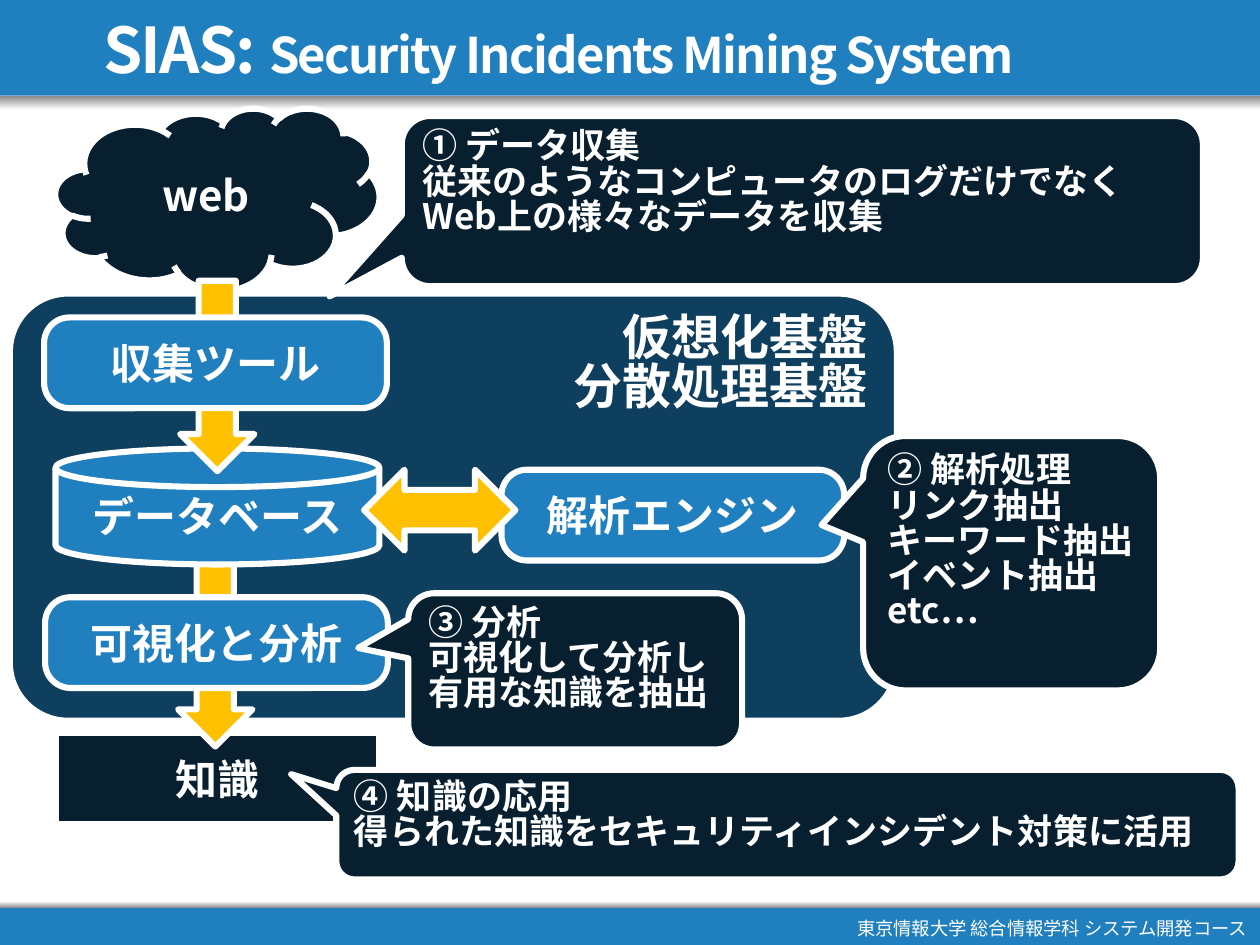
from pptx import Presentation
from pptx import util as u
from pptx.dml import color
from pptx.enum import shapes, text
from pptx.oxml import ns
from lxml import etree

COLORS = {"blue": "207FBF", "navy": "081F2F", "deep": "0F3F5F",
          "amber": "FFC000", "white": "FFFFFF", "shade": "858585"}
FONT = "Noto Sans CJK JP"
KIND = shapes.MSO_SHAPE
ALIGN = text.PP_ALIGN
ANCHOR = text.MSO_ANCHOR

presentation = Presentation()
presentation.slide_width, presentation.slide_height = u.Cm(25.4), u.Cm(19.05)
slide = presentation.slides.add_slide(presentation.slide_layouts[6])


def add_block(kind, box, fill, outlined=True):
    shape = slide.shapes.add_shape(kind, *map(u.Cm, box))
    shape.shadow.inherit = False
    shape.fill.solid()
    shape.fill.fore_color.rgb = color.RGBColor.from_string(COLORS[fill])
    if outlined:
        shape.line.color.rgb = color.RGBColor.from_string(COLORS["white"])
        shape.line.width = u.Pt(3.5)
    else:
        shape.line.fill.background()
    return shape


def write(shape, lines, size, align=ALIGN.LEFT, anchor=ANCHOR.TOP,
          bold=True, spacing=None):
    """Each line is a string, or a list of (string, size) runs."""
    frame = shape.text_frame
    frame.word_wrap, frame.vertical_anchor = True, anchor
    for index, line in enumerate(lines):
        paragraph = frame.paragraphs[0] if index == 0 else frame.add_paragraph()
        paragraph.alignment = align
        if spacing:
            paragraph.line_spacing = spacing
        for words, points in [(line, size)] if isinstance(line, str) else line:
            run = paragraph.add_run()
            run.text = words
            font_format = {"name": FONT, "size": u.Pt(points), "bold": bold}
            for name, value in font_format.items():
                setattr(run.font, name, value)
            run.font.color.rgb = color.RGBColor.from_string(COLORS["white"])
            east_asian = etree.SubElement(run.font._element, ns.qn("a:ea"))
            east_asian.set("typeface", FONT)


# Header and footer bars, each with a soft shadow
for bar, shadow, angle in [((0, 0, 25.4, 1.93), (0, 1.93, 25.4, 0.28), 270),
                           ((0, 18.31, 25.4, 0.74), (0, 18.17, 25.4, 0.14), 90)]:
    add_block(KIND.RECTANGLE, bar, "blue", outlined=False)
    shape = add_block(KIND.RECTANGLE, shadow, "shade", outlined=False)
    shape.fill.gradient()
    shape.fill.gradient_angle = angle
    for stop, name in zip(shape.fill.gradient_stops, ["shade", "white"]):
        stop.color.rgb = color.RGBColor.from_string(COLORS[name])

footer = slide.shapes.add_textbox(*map(u.Cm, (11.3, 18.34, 14.1, 0.71)))
write(footer, ["東京情報大学 総合情報学科 システム開発コース"], 10.5,
      ALIGN.RIGHT, ANCHOR.BOTTOM, bold=False)

# Title with tightened letters
title = slide.shapes.add_textbox(*map(u.Cm, (1.83, 0.03, 23.57, 1.9)))
write(title, [[("SIAS: ", 36), ("Security Incidents Mining System", 28)]], 36,
      anchor=ANCHOR.MIDDLE)
for run in title.text_frame.paragraphs[0].runs:
    run.font._element.set("spc", "-100")

# Platform behind the system, with the knowledge box below it
knowledge = add_block(KIND.RECTANGLE, (1.12, 14.78, 6.53, 1.83), "navy")
write(knowledge, ["知識"], 24, ALIGN.CENTER, ANCHOR.MIDDLE)
platform = add_block(KIND.ROUNDED_RECTANGLE, (0.2, 5.92, 17.88, 8.61), "deep")
platform.adjustments[0] = 0.136
write(platform, ["仮想化基盤", "分散処理基盤"], 28, ALIGN.RIGHT, spacing=0.83)

# Flow from back to front: nodes have a label, arrows have none
flow = [
    (KIND.RIGHT_ARROW, (2.46, 12.42, 3.76, 1.5), "amber", None),
    (KIND.FLOWCHART_MAGNETIC_DISK, (1.12, 9.04, 6.53, 2.34), "blue", "データベース"),
    (KIND.CLOUD, (1.12, 2.18, 6.53, 3.68), "navy", "web"),
    (KIND.RIGHT_ARROW, (2.46, 6.83, 3.84, 1.5), "amber", None),
    (KIND.ROUNDED_RECTANGLE, (0.89, 6.4, 6.91, 1.83), "blue", "収集ツール"),
    (KIND.ROUNDED_RECTANGLE, (10.11, 9.47, 6.91, 1.83), "blue", "解析エンジン"),
    (KIND.LEFT_RIGHT_ARROW, (7.34, 9.47, 3.05, 1.63), "amber", None),
    (KIND.ROUNDED_RECTANGLE, (0.91, 12.04, 6.91, 1.83), "blue", "可視化と分析"),
]
for kind, box, fill, label in flow:
    shape = add_block(kind, box, fill)
    if kind == KIND.RIGHT_ARROW:
        shape.rotation = 90
    if kind == KIND.ROUNDED_RECTANGLE:
        shape.adjustments[0] = 0.28
    if label:
        write(shape, [label], 24, ALIGN.CENTER, ANCHOR.MIDDLE)

# Callouts: box, pointer tip, lines
callouts = [
    ((8.1, 2.34, 16.15, 3.43), (-0.59, 0.56),
     ["① データ収集",
      "従来のようなコンピュータのログだけでなくWeb上の様々なデータを収集"]),
    ((17.4, 8.79, 5.99, 5.13), (-0.64, -0.15),
     ["② 解析処理", "リンク抽出", "キーワード抽出", "イベント抽出", "etc…"]),
    ((6.78, 15.52, 18.19, 2.21), (-0.55, -0.46),
     ["④ 知識の応用", "得られた知識をセキュリティインシデント対策に活用"]),
    ((8.23, 11.96, 6.73, 3.15), (-0.65, -0.15),
     ["③ 分析", "可視化して分析し有用な知識を抽出"]),
]
for box, tip, lines in callouts:
    shape = add_block(KIND.ROUNDED_RECTANGULAR_CALLOUT, box, "navy")
    shape.adjustments[0], shape.adjustments[1] = tip
    write(shape, lines, 20, spacing=0.84)

presentation.save("out.pptx")
